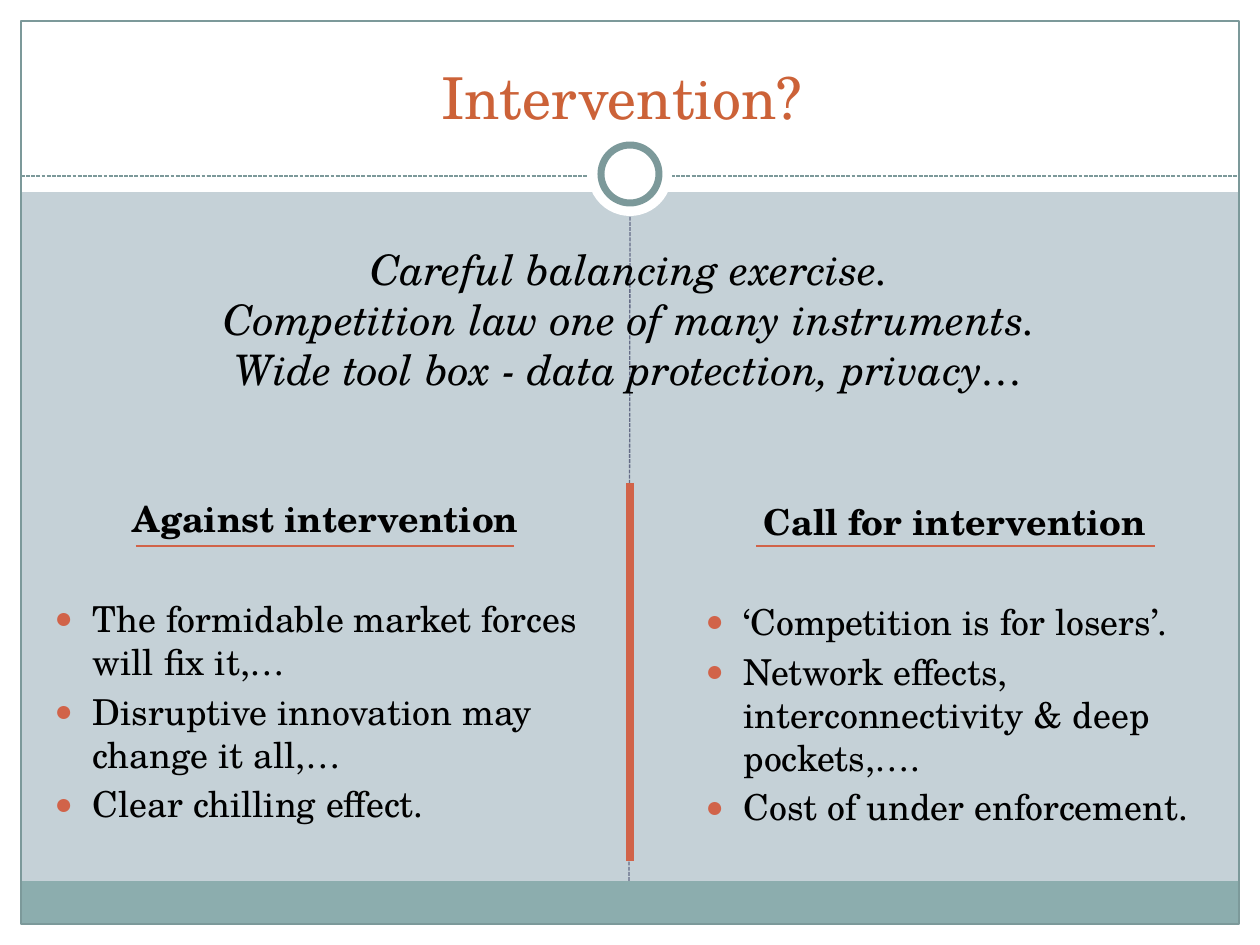
from dataclasses import dataclass

from lxml import etree
from pptx import Presentation
from pptx.dml.color import RGBColor
from pptx.enum import dml, shapes, text
from pptx.oxml.ns import qn
from pptx.util import Emu, Pt

PX_PER_INCH = 126
W, H = 1260, 945
MID = W // 2
EDGE = 21  # white margin around the framed area


@dataclass(frozen=True)
class Theme:
    font: str = "TeX Gyre Schola"
    background: str = "C5D1D7"
    white: str = "FFFFFF"
    band: str = "8CADAE"
    frame: str = "7C999A"
    divider: str = "646B86"
    accent: str = "D16349"
    title: str = "CC6238"
    ink: str = "000000"
    title_size: float = 33
    lead_size: float = 24
    body_size: float = 20.4
    item_gap: float = 4
    heading_gap: float = 32.5


THEME = Theme()


def px(n):
    return Emu(round(n * 914400 / PX_PER_INCH))


def place(sp, x, y, w, h):
    sp.left, sp.top, sp.width, sp.height = px(x), px(y), px(w), px(h)


def style_line(line, color, width, dash=None):
    line.color.rgb = RGBColor.from_string(color)
    line.width = Pt(width)
    if dash:
        line.dash_style = dash


def add_shape(slide, kind, x, y, w, h, fill=None, line=None, width=0.75):
    sp = slide.shapes.add_shape(kind, px(x), px(y), px(w), px(h))
    sp.shadow.inherit = False
    if fill:
        sp.fill.solid()
        sp.fill.fore_color.rgb = RGBColor.from_string(fill)
    else:
        sp.fill.background()
    if line:
        style_line(sp.line, line, width)
    else:
        sp.line.fill.background()


def add_line(slide, x1, y1, x2, y2, color, width=0.75, dash=None):
    line = slide.shapes.add_connector(
        shapes.MSO_CONNECTOR.STRAIGHT, px(x1), px(y1), px(x2), px(y2))
    style_line(line.line, color, width, dash)
    etree.SubElement(line._element.spPr, qn("a:effectLst"))


def format_runs(p, size, color, bold=False, italic=False):
    for r in p.runs:
        r.font.name = THEME.font
        r.font.size = Pt(size)
        r.font.color.rgb = RGBColor.from_string(color)
        r.font.bold = bold
        r.font.italic = italic


def set_bullet(p, char=None, indent=0):
    pPr = p._p.get_or_add_pPr()
    pPr.set("marL", str(px(indent)))
    pPr.set("indent", str(-px(indent)))
    if char is None:
        etree.SubElement(pPr, qn("a:buNone"))
        return
    color = etree.SubElement(pPr, qn("a:buClr"))
    etree.SubElement(color, qn("a:srgbClr"), val=THEME.accent)
    etree.SubElement(pPr, qn("a:buSzPct"), val="85000")
    etree.SubElement(pPr, qn("a:buChar"), char=char)


def add_backdrop(slide):
    rect, oval = shapes.MSO_SHAPE.RECTANGLE, shapes.MSO_SHAPE.OVAL
    dash = dml.MSO_LINE.SQUARE_DOT
    slide.background.fill.solid()
    slide.background.fill.fore_color.rgb = RGBColor.from_string(THEME.background)

    # White header and margins, then the footer band
    for box in ((0, H - EDGE, W, EDGE), (0, 0, W, 192),
                (0, 0, EDGE, H), (W - EDGE, 0, EDGE, H)):
        add_shape(slide, rect, *box, fill=THEME.white)
    add_shape(slide, rect, EDGE, 881, W - 2 * EDGE, 43, fill=THEME.band)
    add_shape(slide, rect, EDGE, EDGE, W - 2 * EDGE, H - 2 * EDGE,
              line=THEME.frame)

    # Header rule with its ring, and the centre divider
    add_line(slide, EDGE, 176, W - EDGE, 176, THEME.frame, dash=dash)
    add_shape(slide, oval, MID - 42, 132, 84, 84, fill=THEME.white)
    add_shape(slide, oval, MID - 29, 145, 58, 58, fill=THEME.white,
              line=THEME.frame, width=4)
    add_line(slide, MID - 1, 881, MID, 217, THEME.divider, dash=dash)


def bring_to_front(slide, sp):
    slide.shapes._spTree.append(sp._element)


def fill_title(slide, words):
    sp = slide.shapes.title
    bring_to_front(slide, sp)
    place(sp, 42, 32, 1176, 105)
    tf = sp.text_frame
    tf.text = words
    tf.auto_size = text.MSO_AUTO_SIZE.NONE
    tf.vertical_anchor = text.MSO_ANCHOR.BOTTOM
    p = tf.paragraphs[0]
    p.alignment = text.PP_ALIGN.CENTER
    format_runs(p, THEME.title_size, THEME.title)


def fill_column(slide, sp, box, inset, heading, items):
    bring_to_front(slide, sp)
    place(sp, *box)
    tf = sp.text_frame
    tf.auto_size = text.MSO_AUTO_SIZE.NONE
    tf.margin_top = px(inset)
    for i, words in enumerate([heading, *items]):
        p = tf.paragraphs[0] if i == 0 else tf.add_paragraph()
        p.text = words
        if i == 0:
            set_bullet(p)
            p.alignment = text.PP_ALIGN.CENTER
            p.space_before = Pt(0)
        else:
            set_bullet(p, "●", 38)
            p.space_before = Pt(THEME.heading_gap if i == 1 else THEME.item_gap)
        format_runs(p, THEME.body_size, THEME.ink, bold=i == 0)


def add_lead(slide, lines):
    sp = slide.shapes.add_textbox(px(73), px(237), px(1113), px(165))
    tf = sp.text_frame
    tf.word_wrap = True
    tf.text = "\n".join(lines)
    for p in tf.paragraphs:
        p.alignment = text.PP_ALIGN.CENTER
        format_runs(p, THEME.lead_size, THEME.ink, italic=True)


def main():
    prs = Presentation()
    prs.slide_width, prs.slide_height = px(W), px(H)
    slide = prs.slides.add_slide(prs.slide_layouts[3])
    _, left, right = slide.placeholders

    add_backdrop(slide)
    fill_title(slide, "Intervention? ")

    # The two sides of the argument
    fill_column(slide, left, (42, 445, 567, 469), 52, "Against intervention", [
        "The formidable market forces will fix it,…",
        "Disruptive innovation may change it all,…",
        "Clear chilling effect.",
    ])
    fill_column(slide, right, (693, 494, 524, 357), 6, "Call for intervention", [
        "‘Competition is for losers’.",
        "Network effects, interconnectivity & deep pockets,….",
        "Cost of under enforcement.",
    ])

    # Bar between the columns and rules under the headings
    add_line(slide, MID, 483, MID, 861, THEME.accent, width=4.5)
    for x1, x2 in ((136, 514), (756, 1155)):
        add_line(slide, x1, 546, x2, 546, THEME.accent)

    add_lead(slide, [
        "Careful balancing exercise.",
        "Competition law one of many instruments.",
        "Wide tool box - data protection, privacy…",
    ])
    prs.save("out.pptx")


if __name__ == "__main__":
    main()
